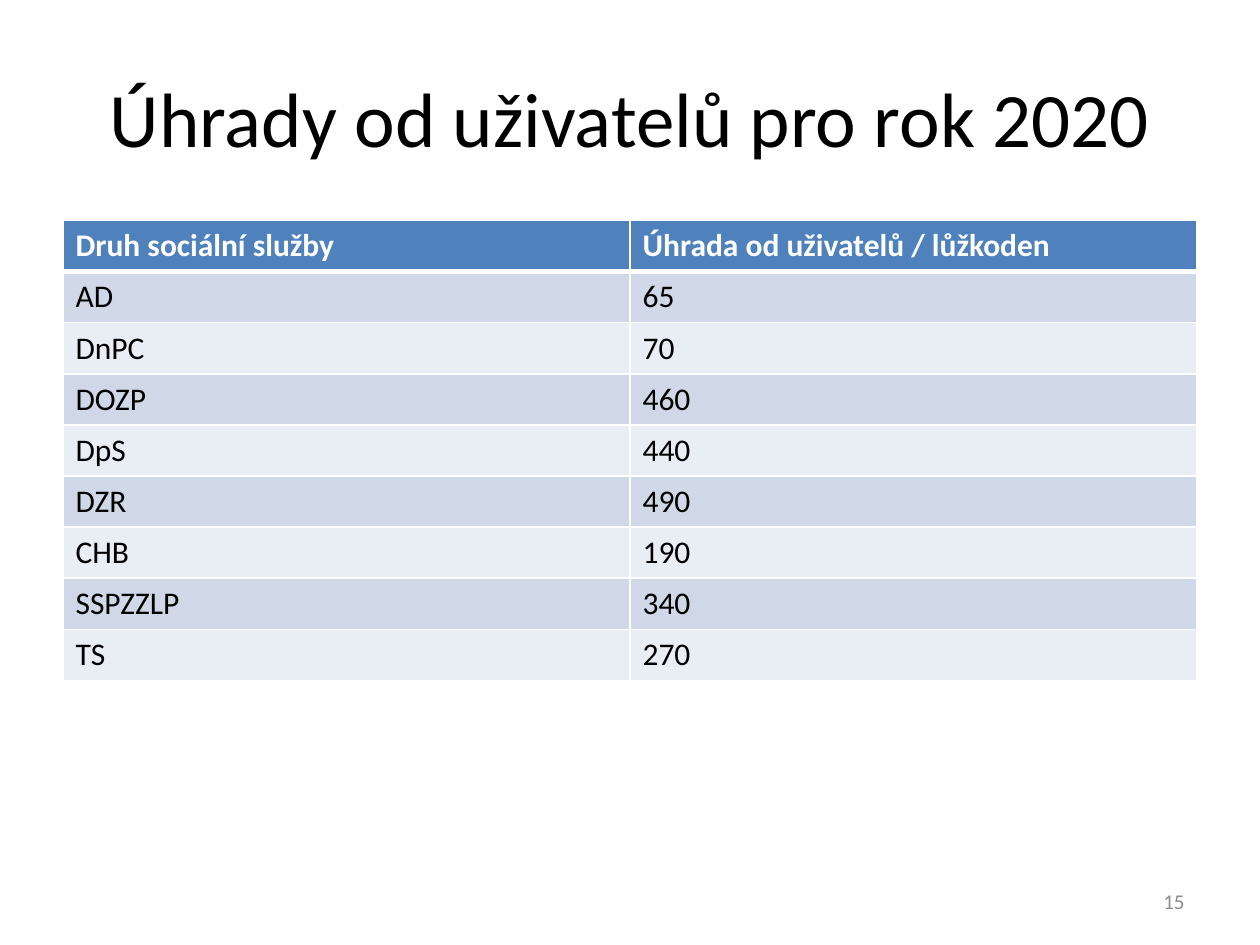
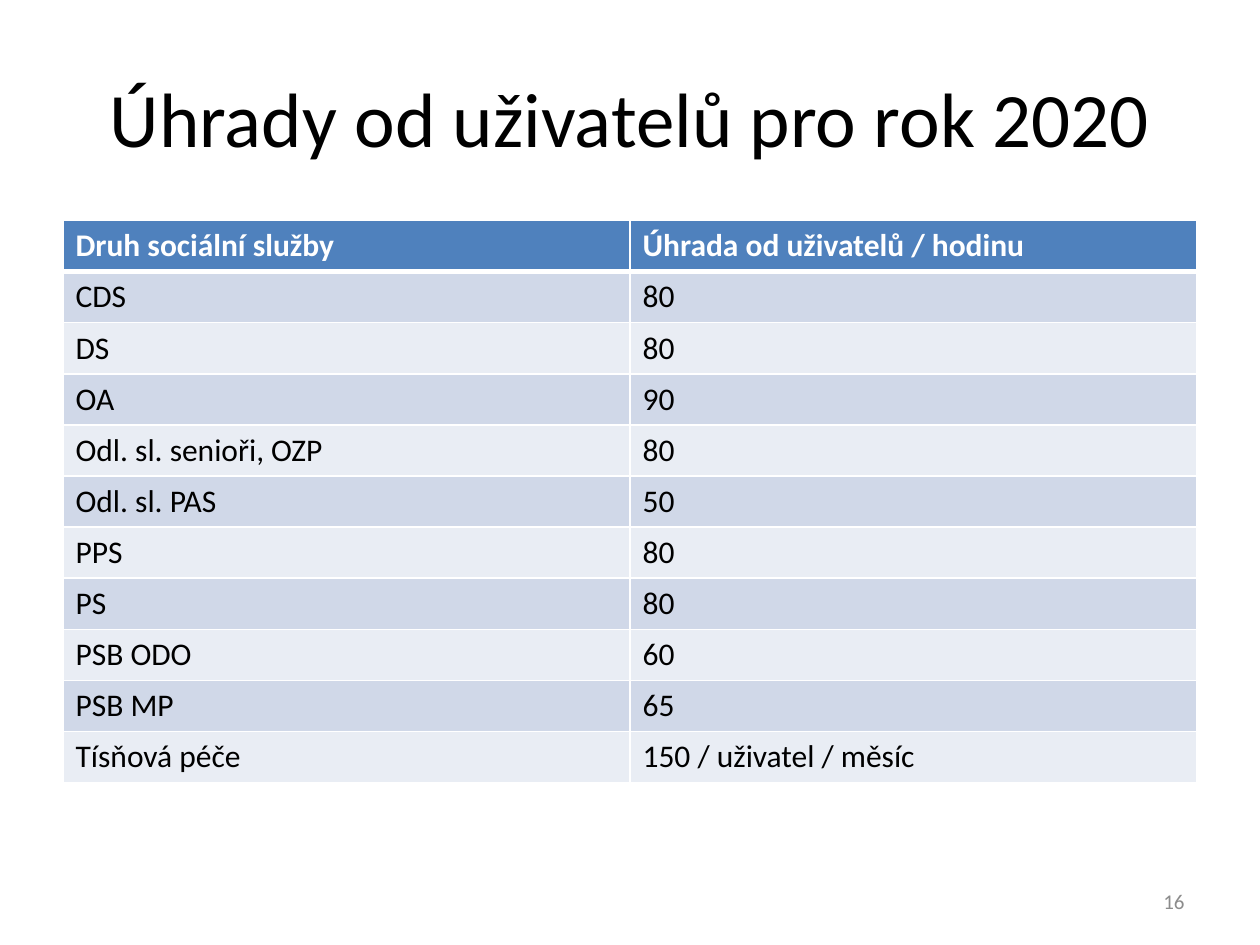
from pptx import Presentation
from pptx.dml.color import RGBColor
from pptx.enum.text import MSO_ANCHOR, PP_ALIGN
from pptx.oxml import parse_xml
from pptx.oxml.ns import nsdecls
from pptx.util import Inches, Pt

TITLE = "Úhrady od uživatelů pro rok 2020"
SERVICE_HEADING = "Druh sociální služby"
FIRST_NUMBER = 15

FEE_TABLES = [
    ("Úhrada od uživatelů / lůžkoden", [
        ("AD", "65"),
        ("DnPC", "70"),
        ("DOZP", "460"),
        ("DpS", "440"),
        ("DZR", "490"),
        ("CHB", "190"),
        ("SSPZZLP", "340"),
        ("TS", "270"),
    ]),
    ("Úhrada od uživatelů / hodinu", [
        ("CDS", "80"),
        ("DS", "80"),
        ("OA", "90"),
        ("Odl. sl. senioři, OZP", "80"),
        ("Odl. sl. PAS", "50"),
        ("PPS", "80"),
        ("PS", "80"),
        ("PSB ODO", "60"),
        ("PSB MP", "65"),
        ("Tísňová péče", "150 / uživatel / měsíc"),
    ]),
]

BLACK = RGBColor(0x00, 0x00, 0x00)
WHITE = RGBColor(0xFF, 0xFF, 0xFF)
GREY = RGBColor(0x8C, 0x8C, 0x8C)
HEADER_BLUE = RGBColor(0x4F, 0x81, 0xBD)
BANDS = [RGBColor(0xE9, 0xED, 0xF4), RGBColor(0xD0, 0xD8, 0xE8)]

TITLE_FONT = {"name": "Calibri", "size": Pt(44), "color": BLACK}
HEADER_FONT = {"name": "Calibri", "size": Pt(18), "bold": True, "color": WHITE}
BODY_FONT = {"name": "Calibri", "size": Pt(18), "bold": False, "color": BLACK}
NUMBER_FONT = {"name": "Calibri", "size": Pt(12), "color": GREY}

LEFT, WIDTH = Inches(0.5), Inches(9)
TABLE_TOP = Inches(1.75)
ROW_HEIGHT = Inches(3.65) // 9
THIN, THICK = Pt(1), Pt(3)


def write(frame, text, font, align=PP_ALIGN.LEFT):
    para = frame.paragraphs[0]
    para.alignment = align
    span = para.add_run()
    span.text = text
    for name, value in font.items():
        if name == "color":
            span.font.color.rgb = value
        else:
            setattr(span.font, name, value)


def set_borders(cell, top, bottom):
    properties = cell._tc.get_or_add_tcPr()
    for side, width in {"L": THIN, "R": THIN, "T": top, "B": bottom}.items():
        properties.append(parse_xml(
            f'<a:ln{side} {nsdecls("a")} w="{width}"><a:solidFill>'
            f'<a:srgbClr val="{WHITE}"/></a:solidFill></a:ln{side}>'))


def add_title(page):
    title = page.shapes.title
    title.left, title.top = LEFT, Inches(0.3)
    title.width, title.height = WIDTH, Inches(1.25)
    title.text_frame.vertical_anchor = MSO_ANCHOR.MIDDLE
    write(title.text_frame, TITLE, TITLE_FONT, PP_ALIGN.CENTER)


def add_fee_table(page, rows):
    table = page.shapes.add_table(
        len(rows), 2, LEFT, TABLE_TOP, WIDTH, ROW_HEIGHT * len(rows)).table
    for row_index, row in enumerate(rows):
        is_header = row_index == 0
        for column_index, text in enumerate(row):
            cell = table.cell(row_index, column_index)
            set_borders(cell, THICK if row_index == 1 else THIN,
                        THICK if is_header else THIN)
            cell.fill.solid()
            cell.fill.fore_color.rgb = HEADER_BLUE if is_header else BANDS[row_index % 2]
            write(cell.text_frame, text, HEADER_FONT if is_header else BODY_FONT)


def add_number(page, number):
    box = page.shapes.add_textbox(Inches(7.17), Inches(6.95), Inches(2.33), Inches(0.4))
    box.text_frame.word_wrap = True
    box.text_frame.vertical_anchor = MSO_ANCHOR.MIDDLE
    write(box.text_frame, str(number), NUMBER_FONT, PP_ALIGN.RIGHT)


def main():
    deck = Presentation()
    deck.slide_width, deck.slide_height = Inches(10), Inches(7.5)
    title_only = deck.slide_layouts.get_by_name("Title Only")
    for number, (fee_heading, fees) in enumerate(FEE_TABLES, FIRST_NUMBER):
        page = deck.slides.add_slide(title_only)
        add_title(page)
        add_fee_table(page, [(SERVICE_HEADING, fee_heading), *fees])
        add_number(page, number)
    deck.save("out.pptx")


if __name__ == "__main__":
    main()
